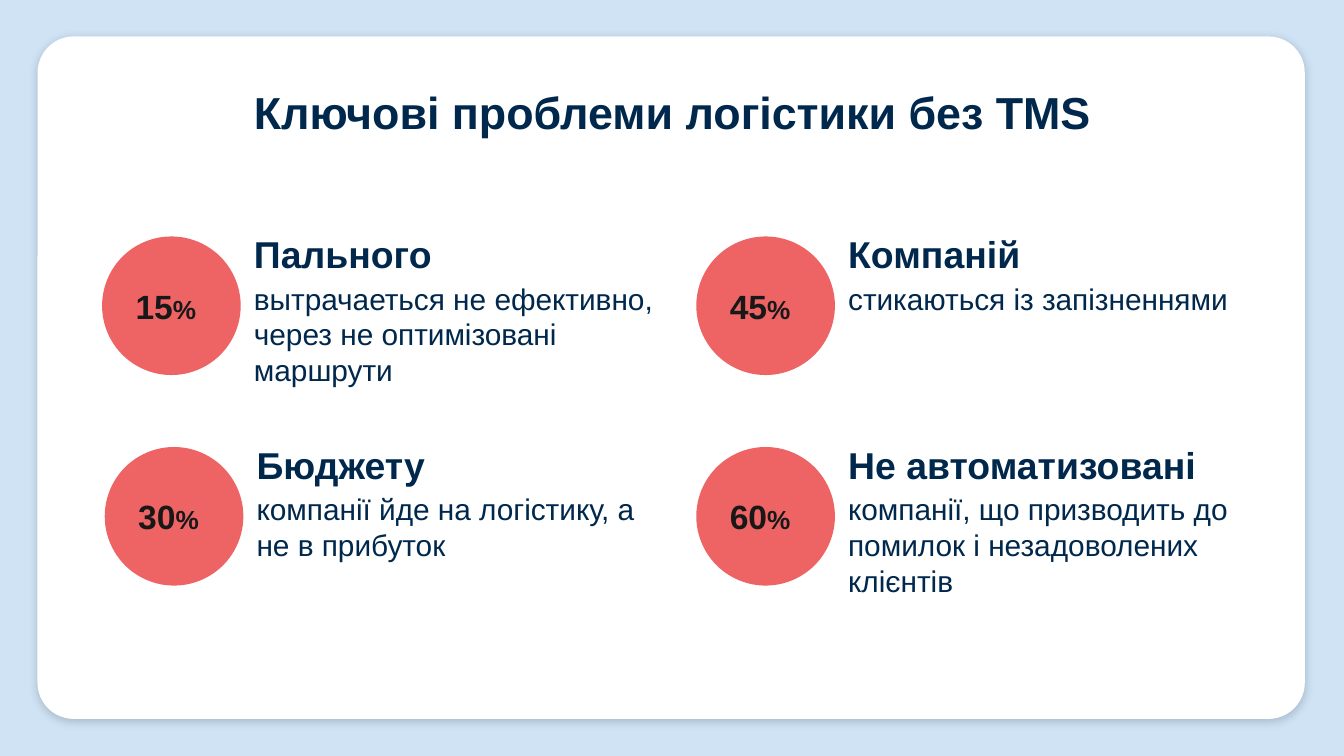
from dataclasses import dataclass

from lxml.etree import SubElement
from pptx import Presentation
from pptx.dml.color import RGBColor
from pptx.enum.shapes import MSO_SHAPE as Form
from pptx.enum.text import MSO_ANCHOR as Anchor, PP_ALIGN as Align
from pptx.oxml.ns import qn
from pptx.shapes.autoshape import Shape
from pptx.slide import Slide
from pptx.util import Cm, Pt

SKY = RGBColor(0xCF, 0xE3, 0xF5)
WHITE = RGBColor(0xFF, 0xFF, 0xFF)
NAVY = RGBColor(0x00, 0x28, 0x4C)
CORAL = RGBColor(0xEE, 0x64, 0x64)
INK = RGBColor(0x18, 0x18, 0x18)
FONT = "Arial"
DISC = 2.62
WIDE = 8.28


@dataclass(frozen=True)
class Run:
    text: str
    size: int
    color: RGBColor = NAVY
    bold: bool = True


@dataclass(frozen=True)
class Fact:
    left: float
    top: float
    share: str
    head: str
    body: str


FACTS = [
    Fact(1.93, 4.47, "15", "Пального",
         "вытрачаеться не ефективно, через не оптимізовані маршрути"),
    Fact(1.98, 8.45, "30", "Бюджету",
         "компанії йде на логістику, а не в прибуток"),
    Fact(13.16, 4.47, "45", "Компаній", "стикаються із запізненнями"),
    Fact(13.16, 8.45, "60", "Не автоматизованi",
         "компанії, що призводить до помилок і незадоволених клієнтів"),
]


def write(shape: Shape, runs: list[Run], anchor: Anchor, align: Align) -> None:
    frame = shape.text_frame
    frame.word_wrap = True
    frame.vertical_anchor = anchor
    frame.margin_left = frame.margin_right = Cm(0.25)
    frame.margin_top = frame.margin_bottom = Cm(0.25)
    para = frame.paragraphs[0]
    para.alignment = align
    for item in runs:
        run = para.add_run()
        run.text = item.text
        run.font.name = FONT
        run.font.size = Pt(item.size)
        run.font.bold = item.bold
        run.font.color.rgb = item.color


def add_text(slide: Slide, left: float, top: float, width: float, height: float,
             run: Run, anchor: Anchor = Anchor.TOP, align: Align = Align.LEFT) -> None:
    box = slide.shapes.add_textbox(Cm(left), Cm(top), Cm(width), Cm(height))
    write(box, [run], anchor, align)


def add_form(slide: Slide, form: Form, left: float, top: float,
             width: float, height: float, color: RGBColor) -> Shape:
    shape = slide.shapes.add_shape(form, Cm(left), Cm(top), Cm(width), Cm(height))
    shape.shadow.inherit = False
    shape.fill.solid()
    shape.fill.fore_color.rgb = color
    shape.line.fill.background()
    return shape


def add_card(slide: Slide) -> None:
    card = add_form(slide, Form.ROUNDED_RECTANGLE, 0.71, 0.69, 23.95, 12.9, WHITE)
    card.adjustments[0] = 0.053
    effects = card._element.spPr.find(qn("a:effectLst"))
    shade = SubElement(effects, qn("a:outerShdw"), blurRad=str(Pt(4.5)),
                       dist=str(Pt(1.5)), dir="5400000", algn="ctr", rotWithShape="0")
    tint = SubElement(shade, qn("a:srgbClr"), val="26303A")
    SubElement(tint, qn("a:alpha"), val="21000")


def add_fact(slide: Slide, fact: Fact) -> None:
    left = fact.left + DISC
    add_text(slide, left, fact.top + 0.58, WIDE, 1.88, Run(fact.body, 16, bold=False))
    add_text(slide, left, fact.top - 0.42, WIDE, 1.42, Run(fact.head, 20), Anchor.BOTTOM)
    disc = add_form(slide, Form.OVAL, fact.left, fact.top, DISC, DISC, CORAL)
    write(disc, [Run(fact.share, 18, INK), Run("%", 14, INK)], Anchor.MIDDLE, Align.LEFT)


def main() -> None:
    deck = Presentation()
    deck.slide_width, deck.slide_height = Cm(25.4), Cm(14.29)
    slide = deck.slides.add_slide(deck.slide_layouts[6])
    slide.background.fill.solid()
    slide.background.fill.fore_color.rgb = SKY
    add_card(slide)
    add_text(slide, 0.63, 1.35, 24.15, 1.95,
             Run("Ключові проблеми логістики без TMS", 24), align=Align.CENTER)
    for fact in FACTS:
        add_fact(slide, fact)
    deck.save("out.pptx")


if __name__ == "__main__":
    main()
